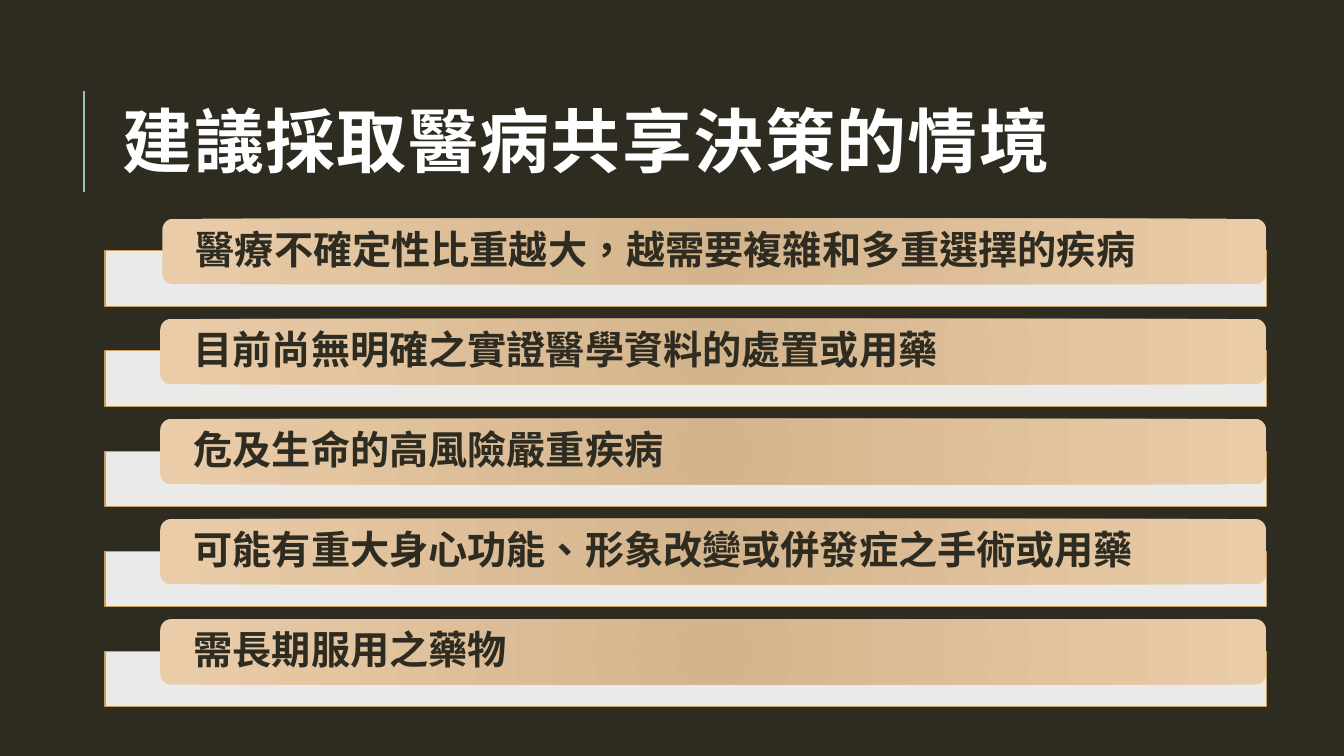
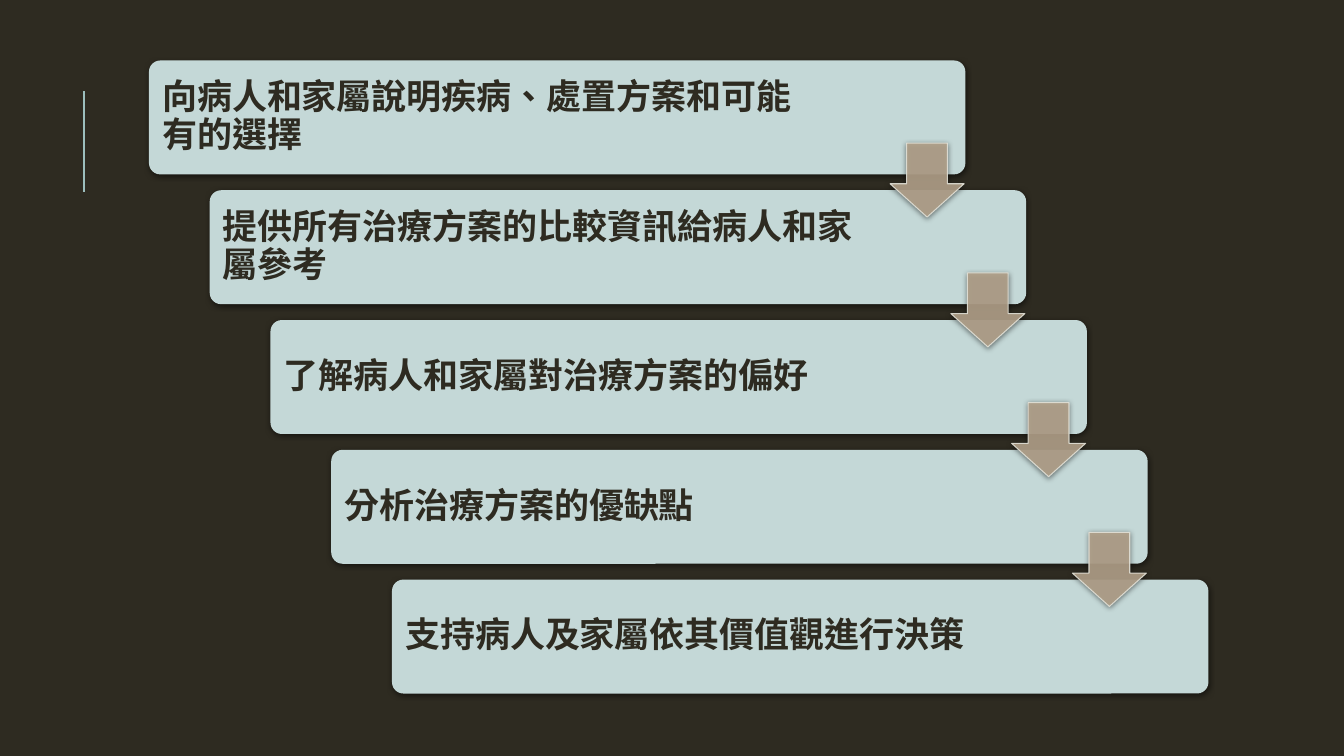
from dataclasses import dataclass

from lxml import etree
from pptx import Presentation
from pptx.dml.color import RGBColor
from pptx.enum.shapes import MSO_CONNECTOR, MSO_SHAPE
from pptx.enum.text import MSO_ANCHOR, MSO_AUTO_SIZE, PP_ALIGN
from pptx.oxml import parse_xml
from pptx.oxml.ns import nsdecls, qn
from pptx.util import Pt

RECT = MSO_SHAPE.RECTANGLE
ROUNDED = MSO_SHAPE.ROUNDED_RECTANGLE
DOWN_ARROW = MSO_SHAPE.DOWN_ARROW
STRAIGHT = MSO_CONNECTOR.STRAIGHT
MIDDLE = MSO_ANCHOR.MIDDLE
LEFT = PP_ALIGN.LEFT
NO_AUTOFIT = MSO_AUTO_SIZE.NONE
TITLE_ONLY, BLANK = 5, 6

# Content: situations carry the left edge of their card
TITLE = "建議採取醫病共享決策的情境"
SITUATIONS = [
    ("醫療不確定性比重越大，越需要複雜和多重選擇的疾病", 116),
    ("目前尚無明確之實證醫學資料的處置或用藥", 114.5),
    ("危及生命的高風險嚴重疾病", 114.5),
    ("可能有重大身心功能、形象改變或併發症之手術或用藥", 114.5),
    ("需長期服用之藥物", 114.5),
]
STEPS = [
    "向病人和家屬說明疾病、處置方案和可能有的選擇",
    "提供所有治療方案的比較資訊給病人和家屬參考",
    "了解病人和家屬對治療方案的偏好",
    "分析治療方案的優缺點",
    "支持病人及家屬依其價值觀進行決策",
]


@dataclass(frozen=True)
class Theme:
    dark: str = "2E2B21"
    white: str = "FFFFFF"
    accent_line: str = "9CBEBD"
    tray_line: str = "C89F5D"
    card_inner: str = "D3B48C"
    card_outer: str = "EACCA9"
    step: str = "C4D8D7"
    arrow: str = "B1A089"
    arrow_line: str = "E2E1D7"
    title_font: str = "Cabin"
    card_font: str = "Arial"
    step_font: str = "Calibri"
    title_size: float = 50
    card_size: float = 28
    step_size: float = 25


THEME = Theme()


def rgb(color):
    return RGBColor.from_string(color)


def write(frame, text, font, size, color, insets, line_spacing=0.9, tracking=0):
    """Fill a frame with one bold, left-aligned, vertically centred paragraph."""
    frame.text = text
    frame.word_wrap = True
    frame.auto_size = NO_AUTOFIT
    frame.vertical_anchor = MIDDLE
    frame.margin_left, frame.margin_top, frame.margin_right, frame.margin_bottom = map(Pt, insets)
    para = frame.paragraphs[0]
    para.alignment = LEFT
    para.line_spacing = line_spacing
    span = para.runs[0]
    span.font.name, span.font.size, span.font.bold = font, Pt(size), True
    span.font.color.rgb = rgb(color)
    properties = span.font._element
    properties.set("lang", "zh-TW")
    if tracking:
        properties.set("spc", str(tracking * 100))


def add_block(page, kind, left, top, width, height, fill, adjustments=()):
    """Add a flat shape without outline."""
    shape = page.shapes.add_shape(kind, Pt(left), Pt(top), Pt(width), Pt(height))
    for index, value in enumerate(adjustments):
        shape.adjustments[index] = value
    shape.shadow.inherit = False
    shape.fill.solid()
    shape.fill.fore_color.rgb = rgb(fill)
    shape.line.fill.background()
    return shape


def outline(shape, color):
    shape.line.color.rgb = rgb(color)
    shape.line.width = Pt(0.75)


def fade(shape):
    """Make the colours set so far 90% opaque."""
    for color in shape.element.spPr.iter(qn("a:srgbClr")):
        etree.SubElement(color, qn("a:alpha")).set("val", "90000")


def add_shadow(shape):
    shape.element.spPr.find(qn("a:effectLst")).append(parse_xml(
        f'<a:outerShdw {nsdecls("a")} blurRad="{Pt(4)}" dist="{Pt(1)}" dir="5400000" '
        'algn="ctr" rotWithShape="0"><a:srgbClr val="000000"><a:alpha val="50000"/>'
        '</a:srgbClr></a:outerShdw>'))


def add_radial_fill(shape, inner, outer):
    properties = shape.element.spPr
    properties.replace(properties.find(qn("a:solidFill")), parse_xml(
        f'<a:gradFill {nsdecls("a")} rotWithShape="1"><a:gsLst>'
        f'<a:gs pos="0"><a:srgbClr val="{inner}"/></a:gs>'
        f'<a:gs pos="100000"><a:srgbClr val="{outer}"/></a:gs></a:gsLst>'
        '<a:path path="circle"><a:fillToRect l="100000" t="100000" r="100000" b="100000"/>'
        '</a:path></a:gradFill>'))


def style_master(deck, page):
    """Give the master its background and the accent line beside the title."""
    master = deck.slide_master
    master.background.fill.solid()
    master.background.fill.fore_color.rgb = rgb(THEME.dark)
    line = page.shapes.add_connector(STRAIGHT, Pt(60), Pt(136.8), Pt(60), Pt(64.8))
    line.line.color.rgb = rgb(THEME.accent_line)
    line.line.width = Pt(1.5)
    etree.SubElement(line.element.spPr, qn("a:effectLst"))
    master.element.cSld.spTree.append(line.element)


def build_situations(page):
    title = page.shapes.title
    title.left, title.top, title.width, title.height = map(Pt, (80.6, 46, 765.4, 118))
    write(title.text_frame, TITLE, THEME.title_font, THEME.title_size, THEME.white,
          (7.2, 3.6, 7.2, 3.6), line_spacing=0.8, tracking=1)

    # Each card lies over a pale tray and shares its right edge
    tray_left, right, first_top, pitch = 75, 904.4, 156.2, 71.5
    for index, (text, left) in enumerate(SITUATIONS):
        top = first_top + index * pitch
        tray = add_block(page, RECT, tray_left, top + 23, right - tray_left, 39.6, THEME.white)
        fade(tray)
        outline(tray, THEME.tray_line)
        card = add_block(page, ROUNDED, left, top, right - left, 46.8, THEME.card_inner)
        add_radial_fill(card, THEME.card_inner, THEME.card_outer)
        write(card.text_frame, text, THEME.card_font, THEME.card_size, THEME.dark,
              (21.6, 0, 21.6, 0))


def build_steps(page):
    # Staircase of steps
    corners = [(106.4 + index * 43.4, 43.2 + index * 92.7) for index in range(len(STEPS))]
    for text, (left, top) in zip(STEPS, corners):
        step = add_block(page, ROUNDED, left, top, 583.2, 81.4, THEME.step, [0.1])
        add_shadow(step)
        write(step.text_frame, text, THEME.step_font, THEME.step_size, THEME.dark,
              (7.2, 7.2, 103, 7.2))

    # Arrows bridging each step and the next
    for left, top in corners[:-1]:
        arrow = add_block(page, DOWN_ARROW, left + 529.4, top + 59, 52.9, 52.9,
                          THEME.arrow, [0.55, 0.45])
        outline(arrow, THEME.arrow_line)
        fade(arrow)
        add_shadow(arrow)


def main():
    deck = Presentation()
    deck.slide_width, deck.slide_height = Pt(960), Pt(540)
    situations = deck.slides.add_slide(deck.slide_layouts[TITLE_ONLY])
    style_master(deck, situations)
    build_situations(situations)
    build_steps(deck.slides.add_slide(deck.slide_layouts[BLANK]))
    deck.save("out.pptx")


if __name__ == "__main__":
    main()
